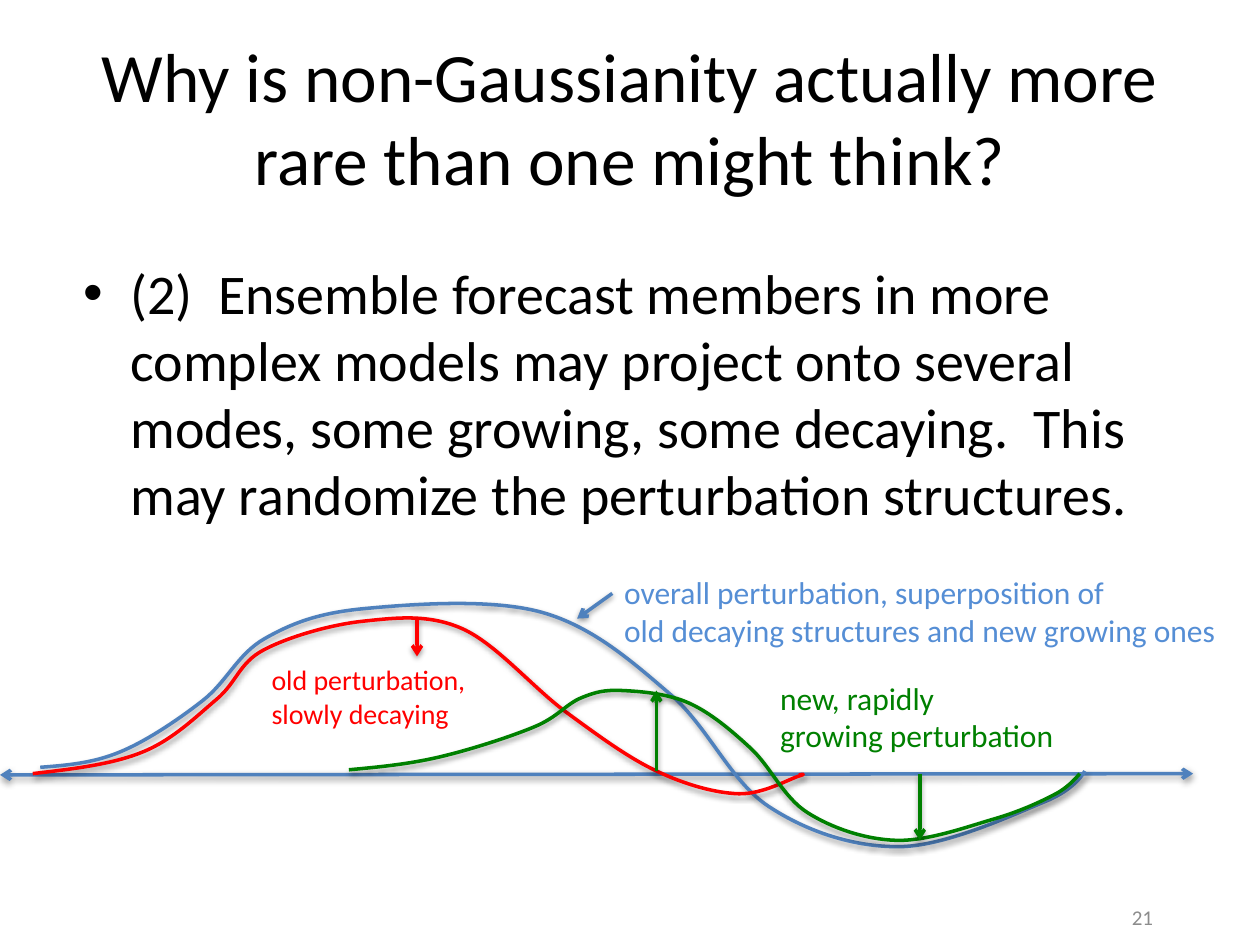
from dataclasses import dataclass

import lxml.etree
import pptx
import pptx.dml.color
import pptx.enum.shapes
import pptx.enum.text
import pptx.oxml
import pptx.oxml.ns
import pptx.util

Pt = pptx.util.Pt
qn = pptx.oxml.ns.qn
ALIGN = pptx.enum.text.PP_ALIGN
ANCHOR = pptx.enum.text.MSO_ANCHOR
AUTO_SIZE = pptx.enum.text.MSO_AUTO_SIZE
Point = tuple[float, float]

COLORS = {
    "text": "000000",
    "number": "8C8C8C",
    "overall": "4F81BD",
    "overall label": "558ED5",
    "old": "FF0000",
    "new": "008000",
}
LINE_WIDTH = 2
SHADOW = (
    f'<a:effectLst {pptx.oxml.ns.nsdecls("a")}>'
    '<a:outerShdw blurRad="40000" dist="20000" dir="5400000" rotWithShape="0">'
    '<a:srgbClr val="000000"><a:alpha val="38000"/></a:srgbClr>'
    "</a:outerShdw></a:effectLst>"
)


@dataclass
class Curve:
    color: str
    anchors: list[Point]


@dataclass
class Arrow:
    color: str
    start: Point
    end: Point
    both_ends: bool = False


@dataclass
class Label:
    lines: list[str]
    color: str
    size: float
    box: tuple[float, float, float, float]
    align: ALIGN = ALIGN.LEFT
    anchor: ANCHOR = ANCHOR.TOP


CURVES = [
    Curve("overall", [
        (23, 438.5), (68.4, 429.8), (115.9, 400.3), (151.2, 365), (208.1, 347.8),
        (309.6, 349.9), (383, 396.7), (439.2, 460.8), (514.8, 483.8),
        (597.6, 457.9), (619.9, 440.6)]),
    Curve("old", [
        (18.7, 442.1), (81.4, 429.8), (123.8, 399.6), (150.5, 371.5), (207.4, 355),
        (264.2, 359.3), (323.3, 406.8), (375.1, 440.6), (421.9, 453.6),
        (456.5, 443.5), (456.5, 442.8)]),
    Curve("new", [
        (199.4, 439.9), (250.6, 432.7), (305.3, 415.4), (331.9, 398.9), (355.7, 394.6),
        (393.8, 401.8), (429.1, 427.7), (461.5, 464.4), (511.9, 480.2),
        (568.1, 468), (603.4, 453.6), (617, 442.1)]),
]
AXIS = Arrow("overall", (0, 442.8), (681.8, 442.1), both_ends=True)
TREND_ARROWS = [
    Arrow("old", (238.3, 353.5), (238.3, 375.1)),
    Arrow("new", (375.1, 440.6), (375.1, 394.6)),
    Arrow("new", (525.6, 442.1), (525.6, 480.2)),
]
OVERALL_POINTER = Arrow("overall", (349.9, 339.1), (329.8, 353.5))
PAGE_NUMBER = Label(["21"], "number", 12, (498.2, 509.8, 167.8, 28.8),
                    ALIGN.RIGHT, ANCHOR.MIDDLE)
LABELS = [
    Label(["old perturbation,", "slowly decaying"], "old", 16, (148.1, 375, 126.7, 46)),
    Label(["overall perturbation, superposition of",
           "old decaying structures and new growing ones"],
          "overall label", 18, (349.6, 324.2, 357.1, 50.9)),
    Label(["new, rapidly", "growing perturbation"], "new", 18, (438.7, 384.2, 172.8, 50.9)),
]


def rgb(color: str) -> pptx.dml.color.RGBColor:
    return pptx.dml.color.RGBColor.from_string(COLORS[color])


def format_font(font, color: str, size: float) -> None:
    for attribute, value in {"name": "Calibri", "size": Pt(size)}.items():
        setattr(font, attribute, value)
    font.color.rgb = rgb(color)


def fill_placeholder(holder, text: str, size: float, box: tuple) -> None:
    for attribute, value in zip(("left", "top", "width", "height"), box):
        setattr(holder, attribute, Pt(value))
    holder.text_frame.text = text
    format_font(holder.text_frame.paragraphs[0].runs[0].font, "text", size)


def style_stroke(stroke, color: str) -> None:
    stroke.line.color.rgb = rgb(color)
    stroke.line.width = Pt(LINE_WIDTH)
    stroke._element.spPr.append(pptx.oxml.parse_xml(SHADOW))


def bezier_pieces(anchors: list[Point]) -> list[tuple[Point, Point, Point]]:
    """Give two controls and an end per piece; tangents follow the neighbours."""
    tangents = [tuple((b - a) / 6 for a, b in zip(before, after))
                for before, after in zip(anchors, anchors[2:])]
    pieces = []
    for i, (start, end) in enumerate(zip(anchors, anchors[1:])):
        arrive = (end if i == len(tangents)
                  else tuple(v - t for v, t in zip(end, tangents[i])))
        leave = (tuple((v + w) / 2 for v, w in zip(start, arrive)) if i == 0
                 else tuple(v + t for v, t in zip(start, tangents[i - 1])))
        pieces.append((leave, arrive, end))
    return pieces


def draw_curve(shapes, curve: Curve) -> None:
    first, *rest = [(Pt(x), Pt(y)) for x, y in curve.anchors]
    outline = shapes.build_freeform(*first)
    outline.add_line_segments(rest, close=False)
    wave = outline.convert_to_shape()
    straights = list(wave._element.iter(qn("a:lnTo")))
    for straight, piece in zip(straights, bezier_pieces(curve.anchors)):
        bend = lxml.etree.Element(qn("a:cubicBezTo"))
        for x, y in piece:
            lxml.etree.SubElement(bend, qn("a:pt"), x=str(Pt(x) - wave.left),
                                  y=str(Pt(y) - wave.top))
        straight.getparent().replace(straight, bend)
    wave.fill.background()
    style_stroke(wave, curve.color)


def draw_arrow(shapes, arrow: Arrow) -> None:
    stroke = shapes.add_connector(
        pptx.enum.shapes.MSO_CONNECTOR.STRAIGHT,
        *(Pt(v) for v in arrow.start + arrow.end))
    style_stroke(stroke, arrow.color)
    for tag in ("a:headEnd", "a:tailEnd") if arrow.both_ends else ("a:tailEnd",):
        lxml.etree.SubElement(stroke.line._get_or_add_ln(), qn(tag), type="arrow")


def draw_label(shapes, label: Label) -> None:
    frame = shapes.add_textbox(*(Pt(v) for v in label.box)).text_frame
    fixed = label is PAGE_NUMBER
    settings = {
        "word_wrap": fixed,
        "auto_size": AUTO_SIZE.NONE if fixed else AUTO_SIZE.SHAPE_TO_FIT_TEXT,
        "vertical_anchor": label.anchor,
        "text": "\n".join(label.lines),
    }
    for attribute, value in settings.items():
        setattr(frame, attribute, value)
    for paragraph in frame.paragraphs:
        paragraph.alignment = label.align
        format_font(paragraph.runs[0].font, label.color, label.size)


def main() -> None:
    deck = pptx.Presentation()
    deck.slide_width, deck.slide_height = Pt(720), Pt(540)
    slide = deck.slides.add_slide(deck.slide_layouts[1])
    shapes = slide.shapes
    fill_placeholder(shapes.title,
                     "Why is non-Gaussianity actually more rare than one might think?",
                     39.6, (36, 21.6, 648, 90))
    fill_placeholder(slide.placeholders[1],
                     "(2)  Ensemble forecast members in more complex models may project "
                     "onto several modes, some growing, some decaying.  This may "
                     "randomize the perturbation structures.",
                     32, (40.3, 144, 648, 356.4))
    draw_label(shapes, PAGE_NUMBER)
    draw_arrow(shapes, AXIS)
    for curve in CURVES:
        draw_curve(shapes, curve)
    for arrow in TREND_ARROWS:
        draw_arrow(shapes, arrow)
    for label in LABELS:
        draw_label(shapes, label)
    draw_arrow(shapes, OVERALL_POINTER)
    deck.save("out.pptx")


if __name__ == "__main__":
    main()
